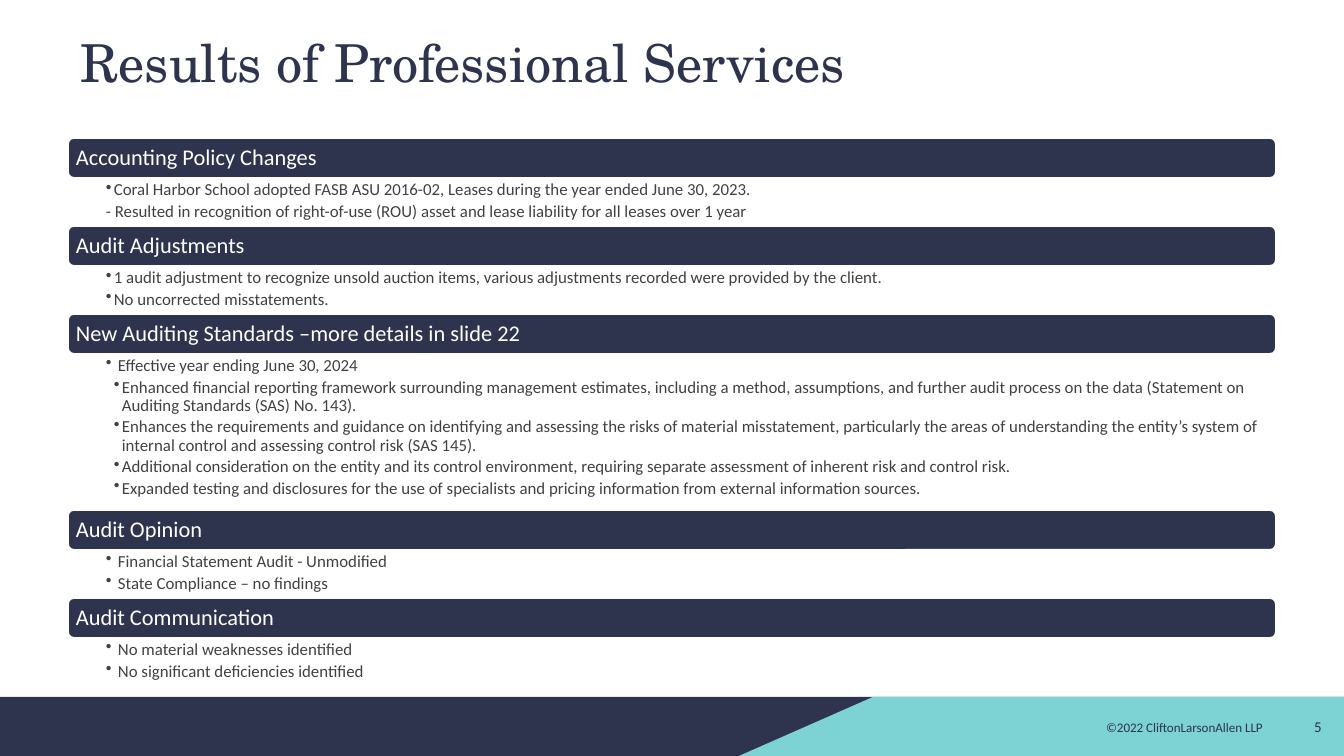
from lxml.etree import SubElement
from pptx import Presentation
from pptx.dml.color import RGBColor
from pptx.enum.shapes import MSO_SHAPE
from pptx.enum.text import MSO_ANCHOR, MSO_AUTO_SIZE, PP_ALIGN
from pptx.oxml.ns import qn
from pptx.util import Pt

PX = 9144000 / 1344
NAVY, TEAL, GREY, WHITE = "2E334E", "7DD2D3", "414142", "FFFFFF"
BAR, ROW = 42, 46

# Kind of line: (left margin, hanging indent, bullet)
STYLES = {
    "tight": (8, 8, True),
    "wide": (12, 12, True),
    "sub": (16, 8, True),
    "plain": (8, 8, False),
}

SECTIONS = [
    ("Accounting Policy Changes", ROW, [
        ("tight", "Coral Harbor School adopted FASB ASU 2016-02, Leases during the year ended June 30, 2023."),
        ("plain", "- Resulted in recognition of right-of-use (ROU) asset and lease liability for all leases over 1 year"),
    ]),
    ("Audit Adjustments", ROW, [
        ("tight", "1 audit adjustment to recognize unsold auction items, various adjustments recorded were provided by the client."),
        ("tight", "No uncorrected misstatements."),
    ]),
    ("New Auditing Standards –more details in slide 22", 154, [
        ("wide", "Effective year ending June 30, 2024"),
        ("sub", "Enhanced financial reporting framework surrounding management estimates, including a method, assumptions, and further audit process on the data (Statement on Auditing Standards (SAS) No. 143)."),
        ("sub", "Enhances the requirements and guidance on identifying and assessing the risks of material misstatement, particularly the areas of understanding the entity’s system of internal control and assessing control risk (SAS 145)."),
        ("sub", "Additional consideration on the entity and its control environment, requiring separate assessment of inherent risk and control risk."),
        ("sub", "Expanded testing and disclosures for the use of specialists and pricing information from external information sources."),
    ]),
    ("Audit Opinion", ROW, [
        ("wide", "Financial Statement Audit - Unmodified"),
        ("wide", "State Compliance – no findings"),
    ]),
    ("Audit Communication", ROW, [
        ("wide", "No material weaknesses identified"),
        ("wide", "No significant deficiencies identified"),
    ]),
]


def px(*nums):
    return [round(n * PX) for n in nums]


def rgb(text):
    return RGBColor.from_string(text)


def paint(shape, fill):
    shape.shadow.inherit = False
    shape.fill.solid()
    shape.fill.fore_color.rgb = rgb(fill)
    shape.line.fill.background()


def write(para, text, size, color, align=PP_ALIGN.LEFT, face="Calibri"):
    para.text = text
    para.alignment = align
    para.font.size = Pt(size)
    para.font.name = face
    para.font.color.rgb = rgb(color)


def inset(frame, left, top, right, bottom):
    frame.word_wrap = True
    (frame.margin_left, frame.margin_top,
     frame.margin_right, frame.margin_bottom) = px(left, top, right, bottom)


def indent(para, kind):
    left, hang, dot = STYLES[kind]
    props = para._p.get_or_add_pPr()
    props.set("marL", str(px(left)[0]))
    props.set("indent", str(-px(hang)[0]))
    if dot:
        SubElement(props, qn("a:buChar")).set("char", "•")
    para.line_spacing = 0.9
    para.space_after = Pt(1.8)


def add_title(slide, x, y, w, h):
    title = slide.shapes.title
    title.left, title.top, title.width, title.height = px(x, y, w, h)
    frame = title.text_frame
    frame.auto_size = MSO_AUTO_SIZE.NONE
    frame.vertical_anchor = MSO_ANCHOR.MIDDLE
    write(frame.paragraphs[0], "Results of Professional Services", 28, NAVY,
          face="TeX Gyre Schola")


def add_label(slide, text, size, x, y, w, h):
    frame = slide.shapes.add_textbox(*px(x, y, w, h)).text_frame
    frame.word_wrap = True
    frame.vertical_anchor = MSO_ANCHOR.MIDDLE
    write(frame.paragraphs[0], text, size, NAVY, PP_ALIGN.RIGHT)


def add_footer(slide, x, y, w, h):
    band = slide.shapes.add_shape(MSO_SHAPE.RECTANGLE, *px(x, y, w, h))
    paint(band, NAVY)
    pen = slide.shapes.build_freeform(x + 873, y, scale=PX)
    pen.add_line_segments([(x + w, y), (x + w, y + h), (x + 739, y + h)])
    paint(pen.convert_to_shape(), TEAL)
    add_label(slide, "©2022 CliftonLarsonAllen LLP", 7, x + 1016, y + 7, 260, 46)
    add_label(slide, "5", 8, x + 1277, y + 4, 58, 51)


def add_section(slide, head, lines, x, y, w, h):
    bar = slide.shapes.add_shape(MSO_SHAPE.ROUNDED_RECTANGLE, *px(x, y, w, BAR))
    paint(bar, NAVY)
    bar.line.color.rgb = rgb(WHITE)
    bar.line.width = Pt(2)
    frame = bar.text_frame
    inset(frame, 7, 6, 7, 6)
    frame.vertical_anchor = MSO_ANCHOR.MIDDLE
    write(frame.paragraphs[0], head, 12, WHITE)
    frame.paragraphs[0].line_spacing = 0.9

    frame = slide.shapes.add_textbox(*px(x, y + BAR, w, h)).text_frame
    inset(frame, 39, 2, 12, 2)
    for i, (kind, text) in enumerate(lines):
        para = frame.add_paragraph() if i else frame.paragraphs[0]
        indent(para, kind)
        write(para, text, 9, GREY)


def add_sections(slide, x, y, w):
    for head, h, lines in SECTIONS:
        add_section(slide, head, lines, x, y, w, h)
        y += BAR + h


def main():
    deck = Presentation()
    deck.slide_width, deck.slide_height = px(1344, 756)
    slide = deck.slides.add_slide(deck.slide_layouts[5])
    add_footer(slide, 0, 697, 1344, 59)
    add_title(slide, 67, 11, 1210, 101)
    add_sections(slide, 67, 137, 1210)
    deck.save("out.pptx")


if __name__ == "__main__":
    main()
